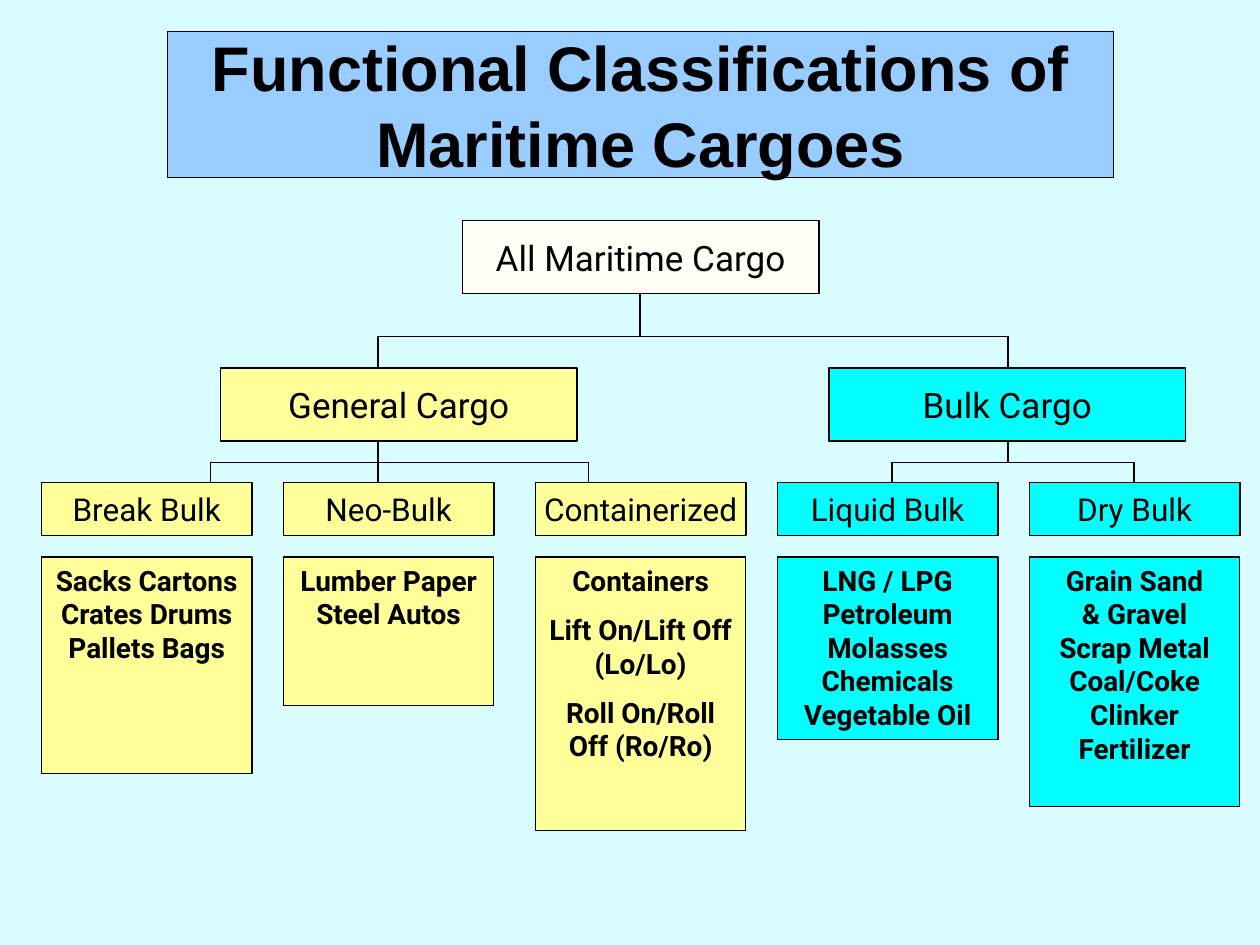
"""Build a slide that classifies maritime cargoes in a tree."""
from dataclasses import dataclass

from lxml.etree import SubElement
from pptx import Presentation
from pptx.dml.color import RGBColor as RGB
from pptx.enum.shapes import MSO_CONNECTOR as Conn, MSO_SHAPE as Shape
from pptx.enum.text import MSO_ANCHOR as Anchor, PP_ALIGN as Align
from pptx.oxml.ns import qn
from pptx.slide import Slide
from pptx.util import Inches, Pt


@dataclass(frozen=True)
class Theme:
    background: RGB = RGB(0xD9, 0xFD, 0xFF)
    title_fill: RGB = RGB(0x99, 0xCC, 0xFF)
    root_fill: RGB = RGB(0xFF, 0xFF, 0xF7)
    general: RGB = RGB(0xFF, 0xFF, 0x99)
    bulk: RGB = RGB(0x00, 0xFF, 0xFF)
    ink: RGB = RGB(0, 0, 0)
    title_font: str = "Arial"
    body_font: str = "Roboto"
    title_size: int = 36
    group_size: int = 20
    type_size: int = 18
    detail_size: int = 16
    paragraph_gap: int = 9
    thin: float = 0.75
    line: float = 1


@dataclass(frozen=True)
class Box:
    left: float
    top: float
    width: float
    height: float
    text: str
    fill: RGB
    size: int
    font: str
    bold: bool = False
    wrap: bool = False
    anchor: Anchor = Anchor.MIDDLE


@dataclass(frozen=True)
class Column:
    left: float
    width: float
    name: str
    fill: RGB
    detail_height: float
    details: str


@dataclass(frozen=True)
class Branch:
    parent_x: float
    parent_bottom: float
    bus_y: float
    child_top: float
    child_xs: tuple[float, ...]


T = Theme()
GROUP_W, GROUP_H = 2.83, 0.58
TYPE_TOP, TYPE_H, DETAIL_TOP = 3.83, 0.42, 4.42

TITLE = Box(1.33, 0.25, 7.51, 1.16, "Functional Classifications of Maritime Cargoes",
            T.title_fill, T.title_size, T.title_font, bold=True, wrap=True)
GROUPS = [
    (3.67, 1.75, "All Maritime Cargo", T.root_fill),
    (1.75, 2.92, "General Cargo", T.general),
    (6.58, 2.92, "Bulk Cargo", T.bulk),
]
COLUMNS = [
    Column(0.33, 1.67, "Break Bulk", T.general, 1.72,
           "Sacks Cartons\vCrates Drums\vPallets Bags"),
    Column(2.25, 1.67, "Neo-Bulk", T.general, 1.18, "Lumber Paper\vSteel Autos"),
    Column(4.25, 1.67, "Containerized", T.general, 2.17,
           "Containers\nLift On/Lift Off (Lo/Lo)\nRoll On/Roll Off (Ro/Ro)"),
    Column(6.17, 1.75, "Liquid Bulk", T.bulk, 1.45,
           "LNG / LPG\vPetroleum\vMolasses\vChemicals\vVegetable Oil"),
    Column(8.17, 1.67, "Dry Bulk", T.bulk, 1.98,
           "Grain Sand\v& Gravel\vScrap Metal\vCoal/Coke\vClinker\vFertilizer"),
]
BRANCHES = [
    Branch(5.08, 2.33, 2.67, 2.92, (3, 8)),
    Branch(3, 3.5, 3.67, TYPE_TOP, (1.67, 3, 4.67)),
    Branch(8, 3.5, 3.67, TYPE_TOP, (7.08, 9)),
]


def add_box(s: Slide, box: Box) -> None:
    """Draw a filled rectangle with centred text."""
    sp = s.shapes.add_shape(Shape.RECTANGLE, Inches(box.left), Inches(box.top),
                            Inches(box.width), Inches(box.height))
    sp.shadow.inherit = False
    sp.fill.solid()
    sp.fill.fore_color.rgb = box.fill
    sp.line.color.rgb = T.ink
    sp.line.width = Pt(T.thin if box.bold else T.line)
    tf = sp.text_frame
    tf.word_wrap = box.wrap
    tf.vertical_anchor = box.anchor
    tf.text = box.text
    for i, p in enumerate(tf.paragraphs):
        p.alignment = Align.CENTER
        p.space_before = Pt(T.paragraph_gap if i else 0)
        for r in p.runs:
            r.font.name = box.font
            r.font.size = Pt(box.size)
            r.font.bold = box.bold
            r.font.color.rgb = T.ink


def add_line(s: Slide, x1: float, y1: float, x2: float, y2: float) -> None:
    """Draw a straight connector without a shadow."""
    cxn = s.shapes.add_connector(Conn.STRAIGHT, Inches(x1), Inches(y1),
                                 Inches(x2), Inches(y2))
    cxn.line.color.rgb = T.ink
    cxn.line.width = Pt(T.line)
    SubElement(cxn._element.spPr, qn("a:effectLst"))


def add_branch(s: Slide, b: Branch) -> None:
    """Join a parent box to its children with a stem, a bus and drops."""
    add_line(s, b.parent_x, b.parent_bottom, b.parent_x, b.bus_y)
    add_line(s, min(b.child_xs), b.bus_y, max(b.child_xs), b.bus_y)
    for x in b.child_xs:
        add_line(s, x, b.bus_y, x, b.child_top)


def add_column(s: Slide, c: Column) -> None:
    """Draw a cargo type and the list of examples below it."""
    add_box(s, Box(c.left, TYPE_TOP, c.width, TYPE_H, c.name, c.fill,
                   T.type_size, T.body_font))
    add_box(s, Box(c.left, DETAIL_TOP, c.width, c.detail_height, c.details, c.fill,
                   T.detail_size, T.body_font, bold=True, wrap=True, anchor=Anchor.TOP))


def main() -> None:
    """Build and save the slide."""
    prs = Presentation()
    prs.slide_width, prs.slide_height = Inches(10), Inches(7.5)
    s = prs.slides.add_slide(prs.slide_layouts[6])
    s.background.fill.solid()
    s.background.fill.fore_color.rgb = T.background
    add_box(s, TITLE)
    for left, top, text, fill in GROUPS:
        add_box(s, Box(left, top, GROUP_W, GROUP_H, text, fill, T.group_size, T.body_font))
    for branch in BRANCHES:
        add_branch(s, branch)
    for column in COLUMNS:
        add_column(s, column)
    prs.save("out.pptx")


if __name__ == "__main__":
    main()
